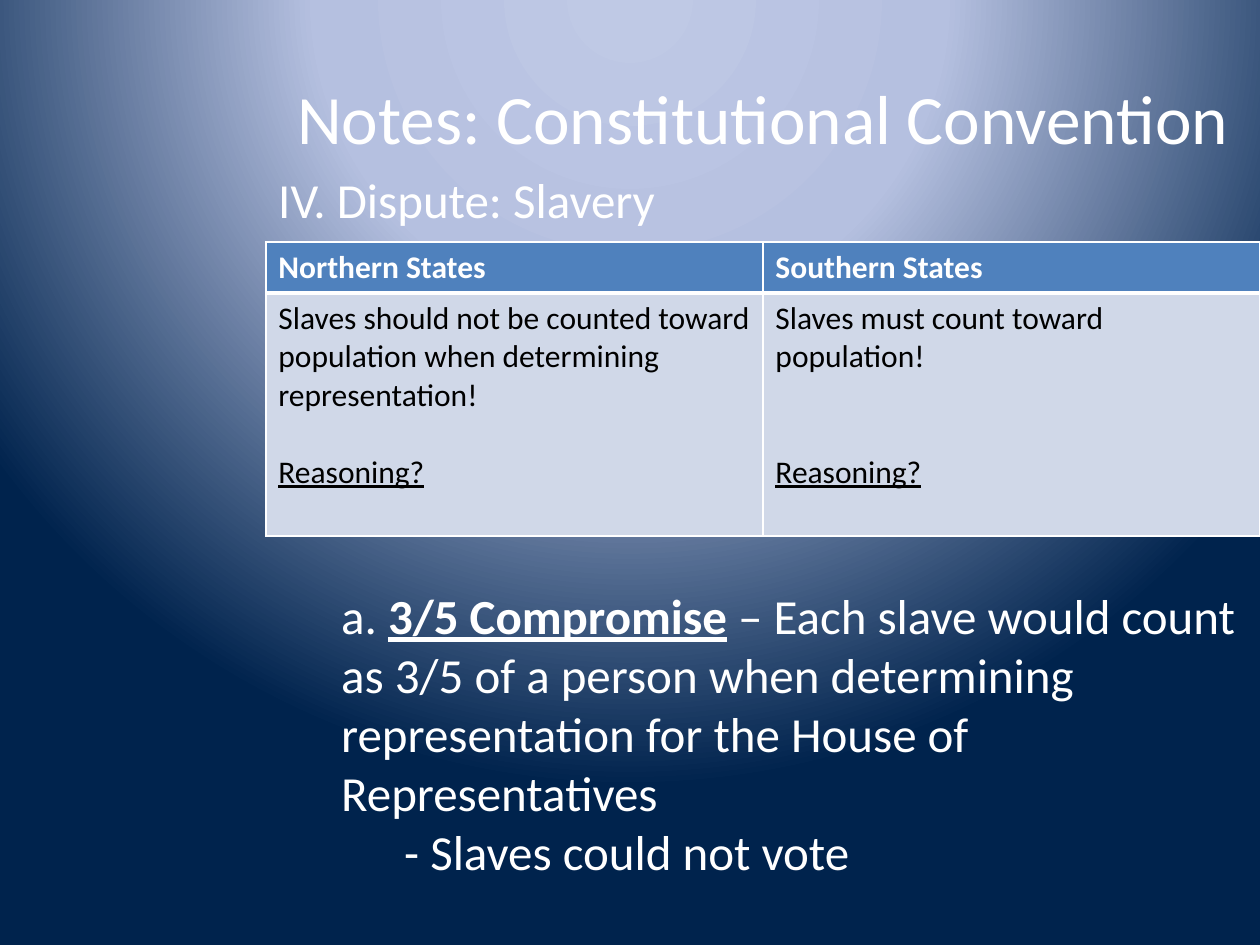
from dataclasses import dataclass

from pptx import Presentation
from pptx.dml.color import RGBColor
from pptx.enum.text import MSO_ANCHOR, PP_ALIGN
from pptx.oxml import parse_xml
from pptx.oxml.ns import nsdecls, qn
from pptx.util import Pt


@dataclass(frozen=True)
class Theme:
    font: str = "Calibri"
    light: str = "FFFFFF"
    dark: str = "000000"
    header_fill: str = "4F81BD"
    body_fill: str = "D0D8E8"
    glow: tuple = ((0, "BFC9E5"), (40, "B5C0E0"), (100, "00234D"))
    title_size: float = 39.6
    text_size: float = 28
    table_size: float = 18
    thin: float = 1
    thick: float = 3


THEME = Theme()
LEFT, WIDTH = 151.9, 568.1
HEADER_HEIGHT, BODY_HEIGHT = 29.2, 139
TABLE_LINE = 22  # height of one line of table text

# Column heading, position, blank lines before the question
STATES = [
    ("Northern States",
     "Slaves should not be counted toward population when determining representation!", 1),
    ("Southern States", "Slaves must count toward population!", 2),
]


def add_run(paragraph, text, size, color=THEME.light, bold=False, underline=False):
    run = paragraph.add_run()
    run.text = text
    font = run.font
    font.name, font.size = THEME.font, Pt(size)
    font.bold, font.underline = bold, underline
    font.color.rgb = RGBColor.from_string(color)


def add_background(slide):
    """Radial glow centred above the slide."""
    stops = "".join(
        f'<a:gs pos="{pos * 1000}"><a:srgbClr val="{color}"/></a:gs>'
        for pos, color in THEME.glow)
    background = parse_xml(
        f'<p:bg {nsdecls("p", "a")}><p:bgPr><a:gradFill rotWithShape="1">'
        f'<a:gsLst>{stops}</a:gsLst><a:path path="circle">'
        '<a:fillToRect l="50000" t="-80000" r="50000" b="180000"/></a:path>'
        '</a:gradFill><a:effectLst/></p:bgPr></p:bg>')
    slide.element.find(qn("p:cSld")).insert(0, background)


def add_title(slide, left, top, width, height):
    title = slide.shapes.title
    title.left, title.top, title.width, title.height = map(Pt, (left, top, width, height))
    frame = title.text_frame
    frame.vertical_anchor = MSO_ANCHOR.MIDDLE
    heading = frame.paragraphs[0]
    heading.alignment = PP_ALIGN.CENTER
    add_run(heading, "Notes: Constitutional Convention", THEME.title_size)


def add_text_frame(slide, left, top, width, height):
    frame = slide.shapes.add_textbox(*map(Pt, (left, top, width, height))).text_frame
    frame.word_wrap = True
    return frame


def add_topic(slide, left, top, width, height):
    topic = add_text_frame(slide, left, top, width, height).paragraphs[0]
    add_run(topic, "IV. Dispute: Slavery", THEME.text_size)


def format_cell(cell, fill, top, bottom):
    cell.fill.solid()
    cell.fill.fore_color.rgb = RGBColor.from_string(fill)
    properties = cell._tc.get_or_add_tcPr()
    sides = (("lnL", THEME.thin), ("lnR", THEME.thin), ("lnT", top), ("lnB", bottom))
    for position, (side, weight) in enumerate(sides):
        properties.insert(position, parse_xml(
            f'<a:{side} {nsdecls("a")} w="{Pt(weight)}"><a:solidFill>'
            f'<a:srgbClr val="{THEME.light}"/></a:solidFill></a:{side}>'))


def add_states_table(slide, left, top, width):
    table = slide.shapes.add_table(
        2, len(STATES), Pt(left), Pt(top), Pt(width),
        Pt(HEADER_HEIGHT + BODY_HEIGHT)).table
    table.rows[0].height, table.rows[1].height = Pt(HEADER_HEIGHT), Pt(BODY_HEIGHT)
    for column, (heading, position, gap) in enumerate(STATES):
        table.columns[column].width = Pt(width / len(STATES))
        header, body = table.cell(0, column), table.cell(1, column)
        format_cell(header, THEME.header_fill, THEME.thin, THEME.thick)
        format_cell(body, THEME.body_fill, THEME.thick, THEME.thin)
        add_run(header.text_frame.paragraphs[0], heading, THEME.table_size, bold=True)
        add_run(body.text_frame.paragraphs[0], position, THEME.table_size, THEME.dark)
        question = body.text_frame.add_paragraph()
        question.space_before = Pt(gap * TABLE_LINE)
        add_run(question, "Reasoning?", THEME.table_size, THEME.dark, underline=True)


def add_compromise(slide, left, top, width, height):
    frame = add_text_frame(slide, left, top, width, height)
    compromise, detail = frame.paragraphs[0], frame.add_paragraph()
    for paragraph, indent in ((compromise, 36), (detail, 72)):
        paragraph._p.get_or_add_pPr().set("marL", str(Pt(indent)))
    add_run(compromise, "a. ", THEME.text_size)
    add_run(compromise, "3/5 Compromise", THEME.text_size, bold=True, underline=True)
    add_run(compromise,
            " – Each slave would count as 3/5 of a person when determining "
            "representation for the House of Representatives", THEME.text_size)
    add_run(detail, "- Slaves could not vote", THEME.text_size)


def main():
    presentation = Presentation()
    presentation.slide_width, presentation.slide_height = Pt(720), Pt(540)
    slide = presentation.slides.add_slide(presentation.slide_layouts[5])
    add_background(slide)
    add_title(slide, LEFT, 21.6, WIDTH, 90)
    add_topic(slide, LEFT, 93.6, WIDTH, 45.4)
    add_states_table(slide, LEFT, 138.2, WIDTH)
    add_compromise(slide, LEFT, 331.2, WIDTH, 198.7)
    presentation.save("out.pptx")


if __name__ == "__main__":
    main()
